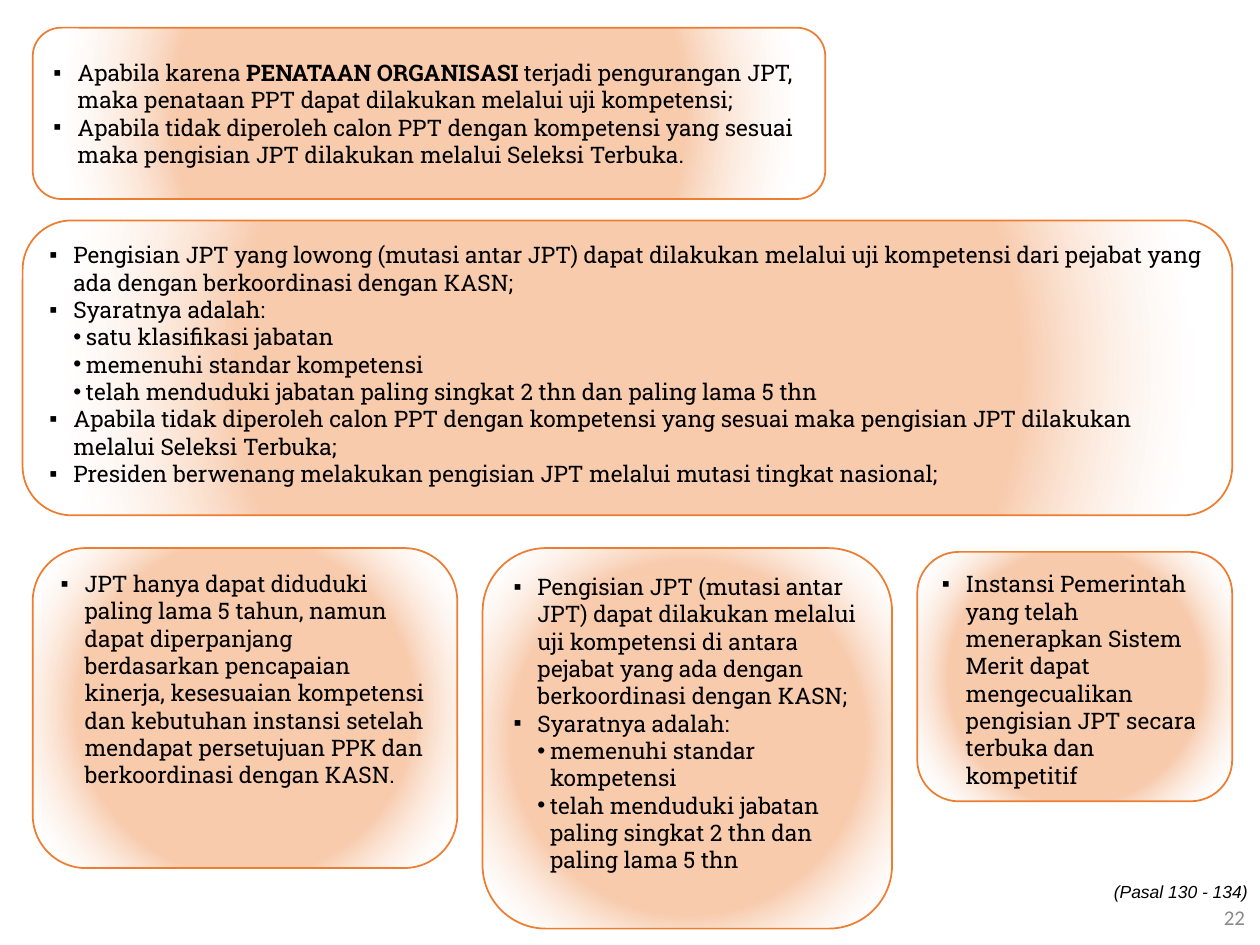
from lxml import etree
from pptx import Presentation
from pptx.dml.color import RGBColor
from pptx.enum.shapes import MSO_SHAPE
from pptx.enum.text import MSO_ANCHOR, MSO_AUTO_SIZE, PP_ALIGN
from pptx.oxml import parse_xml
from pptx.oxml.ns import nsdecls, qn
from pptx.util import Inches, Pt

ROUND = MSO_SHAPE.ROUNDED_RECTANGLE
TOP, MIDDLE = MSO_ANCHOR.TOP, MSO_ANCHOR.MIDDLE
GROW, FIXED = MSO_AUTO_SIZE.SHAPE_TO_FIT_TEXT, MSO_AUTO_SIZE.NONE
LEFT, RIGHT = PP_ALIGN.LEFT, PP_ALIGN.RIGHT

COLORS = {"text": "000000", "muted": "898989", "line": "ED7D31",
          "peach": "F8CBAD", "white": "FFFFFF"}

# Bullet levels: character, left margin, hanging indent
LEVELS = [("▪", 0.19, -0.19), ("•", 0.29, -0.1)]

GLOW = f"""<a:gradFill {nsdecls("a")} rotWithShape="1"><a:gsLst>
<a:gs pos="63000"><a:srgbClr val="{COLORS['peach']}"/></a:gs>
<a:gs pos="91000"><a:srgbClr val="{COLORS['white']}"><a:alpha val="33000"/></a:srgbClr></a:gs>
</a:gsLst><a:path path="circle">
<a:fillToRect l="50000" t="50000" r="50000" b="50000"/></a:path></a:gradFill>"""


class Page:
    font, size = "Roboto Slab", 13

    def __init__(self, deck):
        self.slide = deck.slides.add_slide(deck.slide_layouts[6])

    def run(self, para, text, font, size, color="text", bold=False, italic=False):
        run = para.add_run()
        run.text = text
        style = run.font
        style.name, style.size = font, Pt(size)
        style.bold, style.italic = bold, italic
        style.color.rgb = RGBColor.from_string(COLORS[color])

    def bullet(self, para, level):
        char, margin, indent = LEVELS[level]
        props = para._p.get_or_add_pPr()
        props.set("marL", str(Inches(margin)))
        props.set("indent", str(Inches(indent)))
        etree.SubElement(props, qn("a:buFont")).set("typeface", "Arial")
        etree.SubElement(props, qn("a:buChar")).set("char", char)

    def label(self, at, text, font, size, color="text", italic=False, grow=False):
        box = self.slide.shapes.add_textbox(*map(Inches, at))
        frame = box.text_frame
        frame.word_wrap = not grow
        frame.auto_size = GROW if grow else FIXED
        frame.vertical_anchor = TOP if grow else MIDDLE
        para = frame.paragraphs[0]
        para.alignment = RIGHT
        self.run(para, text, font, size, color, italic=italic)

    def panel(self, at, items, anchor=TOP):
        """Each item is a level and its runs; every second run is bold."""
        box = self.slide.shapes.add_shape(ROUND, *map(Inches, at))
        box.shadow.inherit = False
        box.line.color.rgb = RGBColor.from_string(COLORS["line"])
        box.line.width = Pt(1)
        box._element.spPr.find(qn("a:prstGeom")).addnext(parse_xml(GLOW))
        frame = box.text_frame
        frame.word_wrap = True
        frame.vertical_anchor = anchor
        for i, (level, *runs) in enumerate(items):
            para = frame.add_paragraph() if i else frame.paragraphs[0]
            para.alignment = LEFT
            self.bullet(para, level)
            for j, text in enumerate(runs):
                self.run(para, text, self.font, self.size, bold=j % 2 == 1)


def main():
    deck = Presentation()
    deck.slide_width, deck.slide_height = Inches(10), Inches(7.5)
    page = Page(deck)

    # Page number and article reference
    page.label((9.57, 7.08, 0.41, 0.4), "22", "Calibri", 12, "muted")
    page.label((8.73, 6.94, 1.27, 0.27), "(Pasal 130 - 134)", "Arial", 10,
               italic=True, grow=True)

    # Reorganisation
    page.panel((0.26, 0.22, 6.29, 1.36), [
        (0, "Apabila karena ", "PENATAAN ORGANISASI ",
         "terjadi pengurangan JPT, maka penataan PPT dapat dilakukan melalui uji kompetensi;"),
        (0, "Apabila tidak diperoleh calon PPT dengan kompetensi yang sesuai "
            "maka pengisian JPT dilakukan melalui Seleksi Terbuka."),
    ], MIDDLE)

    # Filling vacant posts
    page.panel((0.18, 1.75, 9.6, 2.34), [
        (0, "Pengisian JPT yang lowong (mutasi antar JPT) dapat dilakukan melalui uji "
            "kompetensi dari pejabat yang ada dengan berkoordinasi dengan KASN;"),
        (0, "Syaratnya adalah:"),
        (1, "satu klasifikasi jabatan"),
        (1, "memenuhi standar kompetensi"),
        (1, "telah menduduki jabatan paling singkat 2 thn dan paling lama 5 thn"),
        (0, "Apabila tidak diperoleh calon PPT dengan kompetensi yang sesuai "
            "maka pengisian JPT dilakukan melalui Seleksi Terbuka;"),
        (0, "Presiden berwenang melakukan pengisian JPT melalui mutasi tingkat nasional;"),
    ])

    # Transfers between posts
    page.panel((3.83, 4.35, 3.25, 3.02), [
        (0, "Pengisian JPT (mutasi antar JPT) dapat dilakukan melalui uji kompetensi "
            "di antara pejabat yang ada dengan berkoordinasi dengan KASN;"),
        (0, "Syaratnya adalah:"),
        (1, "memenuhi standar kompetensi"),
        (1, "telah menduduki jabatan paling singkat 2 thn dan paling lama 5 thn"),
    ])

    # Term of office
    page.panel((0.26, 4.35, 3.37, 2.54), [
        (0, "JPT hanya dapat diduduki paling lama 5 tahun, namun dapat diperpanjang "
            "berdasarkan pencapaian kinerja, kesesuaian kompetensi dan kebutuhan instansi "
            "setelah mendapat persetujuan PPK dan berkoordinasi dengan KASN."),
    ])

    # Merit system exception
    page.panel((7.28, 4.38, 2.5, 1.98), [
        (0, "Instansi Pemerintah yang telah menerapkan Sistem Merit dapat "
            "mengecualikan pengisian JPT secara terbuka dan kompetitif"),
    ])

    deck.save("out.pptx")


if __name__ == "__main__":
    main()
